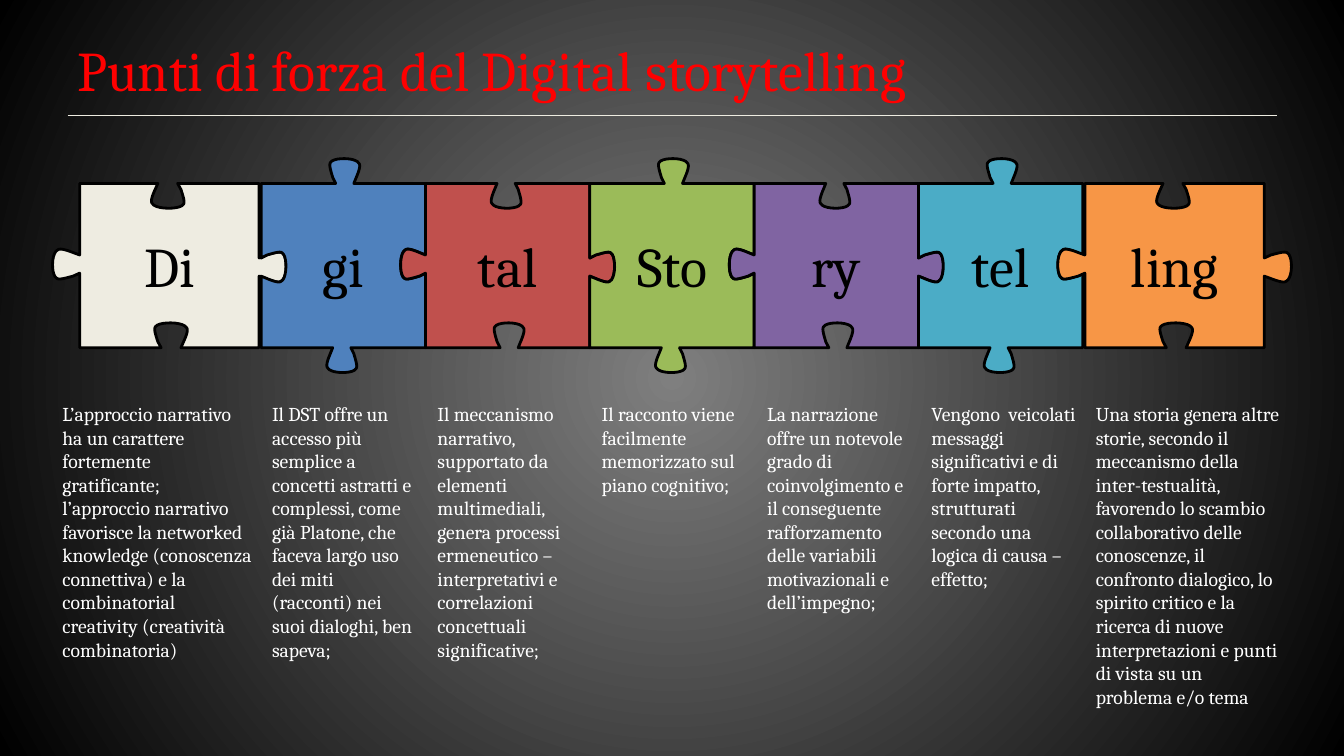
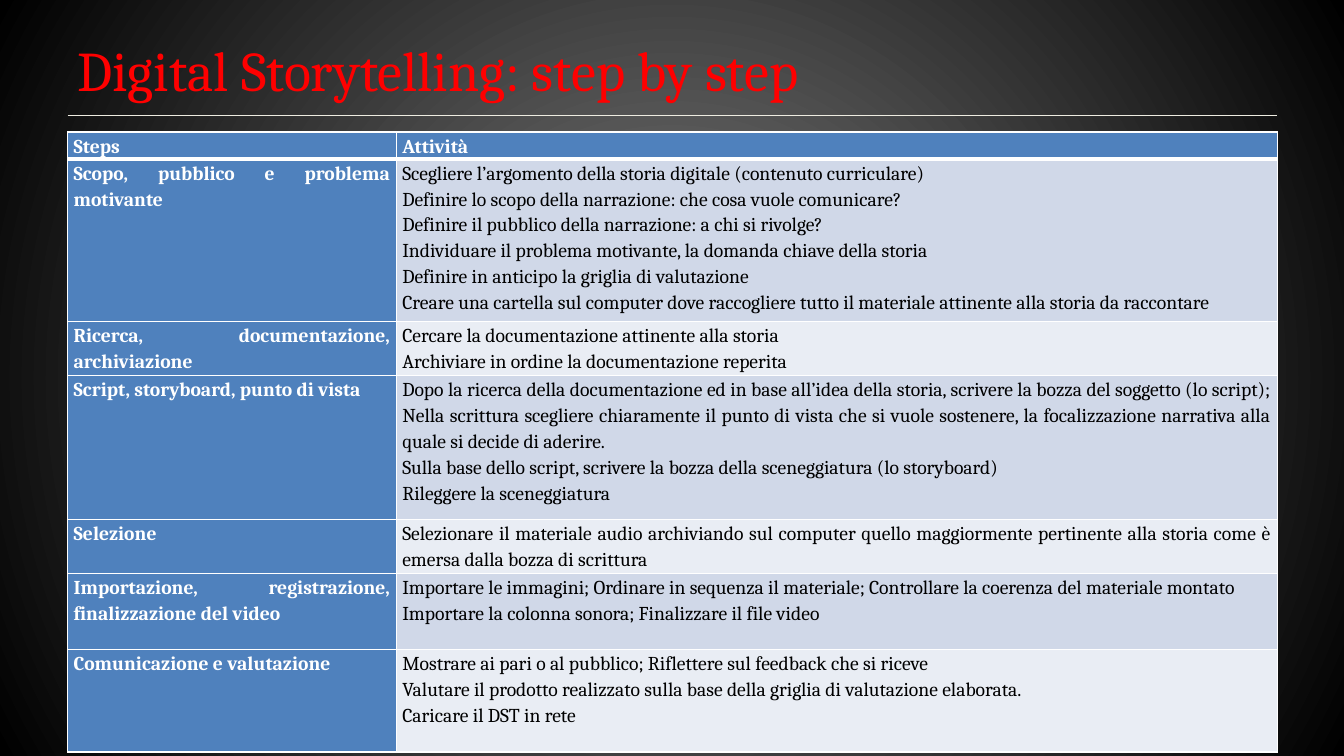
from dataclasses import dataclass

from lxml import etree
from pptx import Presentation
from pptx.dml.color import RGBColor
from pptx.enum.shapes import MSO_CONNECTOR
from pptx.enum.text import MSO_ANCHOR, PP_ALIGN
from pptx.oxml.ns import qn
from pptx.presentation import Presentation as Deck
from pptx.slide import Slide
from pptx.table import _Cell as Cell
from pptx.text.text import TextFrame
from pptx.util import Inches, Pt

STRAIGHT = MSO_CONNECTOR.STRAIGHT
MIDDLE = MSO_ANCHOR.MIDDLE
LEFT, CENTER, JUSTIFY = PP_ALIGN.LEFT, PP_ALIGN.CENTER, PP_ALIGN.JUSTIFY

Point = tuple[float, float]


@dataclass(frozen=True)
class Theme:
    font: str = "Cambria"
    title_size: int = 40
    piece_size: int = 40
    body_size: int = 14
    title: str = "FF0000"
    rule: str = "EEECE1"
    glow: str = "7F7F7F"
    black: str = "000000"
    white: str = "FFFFFF"
    header: str = "4F81BD"
    bands: tuple[str, str] = ("D0D8E8", "E9EDF4")


@dataclass(frozen=True)
class Piece:
    label: str
    color: str
    left: float
    width: float
    note_left: float
    note_width: float
    notes: tuple[str, ...]


@dataclass(frozen=True)
class Step:
    name: str
    height: float
    activities: tuple[str, ...]


THEME = Theme()
MARGIN, CONTENT_WIDTH = 0.67, 12.0
PIECE_TOP, PIECE_SIDE = 1.82, 1.63
NOTE_TOP, NOTE_HEIGHT = 3.94, 2.83
CURVE_STEPS = 10
KNOB_START: Point = (0.74, 0)
KNOB_CURVES: tuple[tuple[Point, ...], ...] = (
    ((0.71, 0.06),),
    ((0.69, 0.13), (0.67, 0.19), (0.69, 0.21)),
    ((0.72, 0.26), (0.94, 0.26), (0.97, 0.2)),
    ((0.99, 0.18), (0.97, 0.12), (0.94, 0.05)),
    ((0.92, 0),),
)

PIECES = (
    Piece("Di", "EEECE1", 0.79, 1.78, 0.52, 2.08, (
        "L’approccio narrativo ha un carattere fortemente gratificante;",
        "l’approccio narrativo favorisce la networked knowledge (conoscenza connettiva) "
        "e la combinatorial creativity (creatività combinatoria)")),
    Piece("gi", "4F81BD", 2.59, 1.63, 2.6, 1.63, (
        "Il DST offre un accesso più semplice a concetti astratti e complessi, come già Platone, "
        "che faceva largo uso dei miti (racconti) nei suoi dialoghi, ben sapeva;",)),
    Piece("tal", "C0504D", 4.22, 1.63, 4.24, 1.63, (
        "Il meccanismo narrativo, supportato da elementi multimediali, genera processi "
        "ermeneutico – interpretativi e correlazioni concettuali significative;",)),
    Piece("Sto", "9BBB59", 5.85, 1.63, 5.87, 1.63, (
        "Il racconto viene facilmente memorizzato sul piano cognitivo;",)),
    Piece("ry", "8064A2", 7.48, 1.63, 7.51, 1.63, (
        "La narrazione offre un notevole grado di coinvolgimento e il conseguente "
        "rafforzamento delle variabili motivazionali e dell’impegno;",)),
    Piece("tel", "4BACC6", 9.11, 1.63, 9.14, 1.63, (
        "Vengono  veicolati messaggi significativi e di forte impatto, strutturati secondo "
        "una logica di causa – effetto;",)),
    Piece("ling", "F79646", 10.76, 1.78, 10.77, 2.04, (
        "Una storia genera altre storie, secondo il meccanismo della inter-testualità, "
        "favorendo lo scambio collaborativo delle conoscenze, il confronto dialogico, "
        "lo spirito critico e la ricerca di nuove interpretazioni e punti di vista su un "
        "problema e/o tema",)),
)

STEPS = (
    Step("Steps", 0.24, ("Attività",)),
    Step("Scopo, pubblico e problema motivante", 1.53, (
        "Scegliere l’argomento della storia digitale (contenuto curriculare)",
        "Definire lo scopo della narrazione: che cosa vuole comunicare?",
        "Definire il pubblico della narrazione: a chi si rivolge?",
        "Individuare il problema motivante, la domanda chiave della storia",
        "Definire in anticipo la griglia di valutazione",
        "Creare una cartella sul computer dove raccogliere tutto il materiale attinente "
        "alla storia da raccontare")),
    Step("Ricerca, documentazione, archiviazione", 0.5, (
        "Cercare la documentazione attinente alla storia",
        "Archiviare in ordine la documentazione reperita")),
    Step("Script, storyboard, punto di vista", 1.43, (
        "Dopo la ricerca della documentazione ed in base all’idea della storia, scrivere la "
        "bozza del soggetto (lo script); Nella scrittura scegliere chiaramente il punto di "
        "vista che si vuole sostenere, la focalizzazione narrativa alla quale si decide di "
        "aderire.",
        "Sulla base dello script, scrivere la bozza della sceneggiatura (lo storyboard)",
        "Rileggere la sceneggiatura")),
    Step("Selezione", 0.5, (
        "Selezionare il materiale audio archiviando sul computer quello maggiormente "
        "pertinente alla storia come è emersa dalla bozza di scrittura",)),
    Step("Importazione, registrazione, finalizzazione del video", 0.75, (
        "Importare le immagini; Ordinare in sequenza il materiale; Controllare la coerenza "
        "del materiale montato",
        "Importare la colonna sonora; Finalizzare il file video")),
    Step("Comunicazione e valutazione", 1.02, (
        "Mostrare ai pari o al pubblico; Riflettere sul feedback che si riceve",
        "Valutare il prodotto realizzato sulla base della griglia di valutazione elaborata.",
        "Caricare il DST in rete")),
)


def rgb(color: str) -> RGBColor:
    return RGBColor.from_string(color)


def write(frame: TextFrame, lines: tuple[str, ...], size: int, color: str,
          align: PP_ALIGN = LEFT, bold: bool = False, spacing: float = 1.0) -> None:
    frame.word_wrap = True
    for index, line in enumerate(lines):
        paragraph = frame.add_paragraph() if index else frame.paragraphs[0]
        paragraph.text = line
        paragraph.alignment = align
        paragraph.line_spacing = spacing
        paragraph.font.name = THEME.font
        paragraph.font.size = Pt(size)
        paragraph.font.bold = bold
        paragraph.font.color.rgb = rgb(color)


def add_text(slide: Slide, left: float, top: float, width: float, height: float,
             lines: tuple[str, ...], size: int, color: str) -> TextFrame:
    box = slide.shapes.add_textbox(Inches(left), Inches(top), Inches(width), Inches(height))
    write(box.text_frame, lines, size, color)
    return box.text_frame


def set_background(presentation: Deck) -> None:
    master = presentation.slide_master
    fill = master.background.fill
    fill.gradient()
    for stop, position, color in zip(fill.gradient_stops, (0, 1), (THEME.glow, THEME.black)):
        stop.position = position
        stop.color.rgb = rgb(color)
    gradient = master.element.find(".//" + qn("a:gradFill"))
    gradient.remove(gradient.find(qn("a:lin")))
    circle = etree.SubElement(gradient, qn("a:path"), path="circle")
    etree.SubElement(circle, qn("a:fillToRect"), dict.fromkeys("ltrb", "50000"))


def add_titled_slide(presentation: Deck, title: str) -> Slide:
    slide = presentation.slides.add_slide(presentation.slide_layouts[6])
    rule = slide.shapes.add_connector(STRAIGHT, Inches(MARGIN), Inches(1.15),
                                      Inches(MARGIN + CONTENT_WIDTH), Inches(1.15))
    rule.line.color.rgb = rgb(THEME.rule)
    rule.line.width = Pt(0.75)
    etree.SubElement(rule.element.spPr, qn("a:effectLst"))
    frame = add_text(slide, MARGIN, 0.3, CONTENT_WIDTH, 0.77, (title,),
                     THEME.title_size, THEME.title)
    frame.vertical_anchor = MIDDLE
    return slide


def knob_points() -> list[Point]:
    points = [KNOB_START]
    for curve in KNOB_CURVES:
        if len(curve) == 1:
            points.append(curve[0])
            continue
        controls = (points[-1], *curve)
        for step in range(1, CURVE_STEPS + 1):
            t = step / CURVE_STEPS
            weights = ((1 - t) ** 3, 3 * t * (1 - t) ** 2, 3 * t * t * (1 - t), t ** 3)
            points.append((sum(w * x for w, (x, _) in zip(weights, controls)),
                           sum(w * y for w, (_, y) in zip(weights, controls))))
    return points


def piece_outline(knobs_on_sides: bool) -> list[Point]:
    side = PIECE_SIDE
    knob = knob_points()
    socket = [(side - along, -out) for along, out in reversed(knob)]
    outline: list[Point] = []
    for edge in range(4):
        is_knob = (edge % 2 == 1) == knobs_on_sides
        for along, out in [(0, 0), *(knob if is_knob else socket)]:
            outline.append(((along, -out), (side + out, along),
                            (side - along, side + out), (-out, side - along))[edge])
    return outline


def add_piece(slide: Slide, piece: Piece, knobs_on_sides: bool) -> None:
    stretch = piece.width / PIECE_SIDE
    points = [(Inches(piece.left + x * stretch), Inches(PIECE_TOP + y))
              for x, y in piece_outline(knobs_on_sides)]
    builder = slide.shapes.build_freeform(*points[0])
    builder.add_line_segments(points[1:], close=True)
    shape = builder.convert_to_shape()
    shape.shadow.inherit = False
    shape.fill.solid()
    shape.fill.fore_color.rgb = rgb(piece.color)
    shape.line.color.rgb = rgb(THEME.black)
    shape.line.width = Pt(2)
    shape.text_frame.vertical_anchor = MIDDLE
    write(shape.text_frame, (piece.label,), THEME.piece_size, THEME.black, CENTER)


def set_borders(cell: Cell, top: float, bottom: float) -> None:
    properties = cell._tc.get_or_add_tcPr()
    widths = {"a:lnL": 1, "a:lnR": 1, "a:lnT": top, "a:lnB": bottom}
    for index, (tag, width) in enumerate(widths.items()):
        border = etree.Element(qn(tag), w=str(Pt(width)))
        fill = etree.SubElement(border, qn("a:solidFill"))
        etree.SubElement(fill, qn("a:srgbClr"), val=THEME.white)
        properties.insert(index, border)


def add_steps_table(slide: Slide) -> None:
    table = slide.shapes.add_table(
        len(STEPS), 2, Inches(MARGIN), Inches(1.31), Inches(CONTENT_WIDTH),
        Inches(sum(step.height for step in STEPS))).table
    for column, width in zip(table.columns, (3.26, 8.74)):
        column.width = Inches(width)
    for row, step in enumerate(STEPS):
        table.rows[row].height = Inches(step.height)
        for column, lines in enumerate(((step.name,), step.activities)):
            cell = table.cell(row, column)
            heading = row == 0 or column == 0
            cell.margin_left = cell.margin_right = Inches(0.06)
            cell.margin_top = cell.margin_bottom = 0
            cell.fill.solid()
            cell.fill.fore_color.rgb = rgb(THEME.header if heading else THEME.bands[(row - 1) % 2])
            set_borders(cell, top=3 if row == 1 else 1, bottom=3 if row == 0 else 1)
            write(cell.text_frame, lines, THEME.body_size,
                  THEME.white if heading else THEME.black, JUSTIFY, heading, 1.15)


def main() -> None:
    presentation = Presentation()
    presentation.slide_width, presentation.slide_height = Inches(13.33), Inches(7.5)
    set_background(presentation)

    strengths = add_titled_slide(presentation, "Punti di forza del Digital storytelling")
    for index, piece in enumerate(PIECES):
        add_piece(strengths, piece, knobs_on_sides=index % 2 == 0)
        add_text(strengths, piece.note_left, NOTE_TOP, piece.note_width, NOTE_HEIGHT,
                 piece.notes, THEME.body_size, THEME.white)

    add_steps_table(add_titled_slide(presentation, "Digital Storytelling: step by step"))
    presentation.save("out.pptx")


if __name__ == "__main__":
    main()
